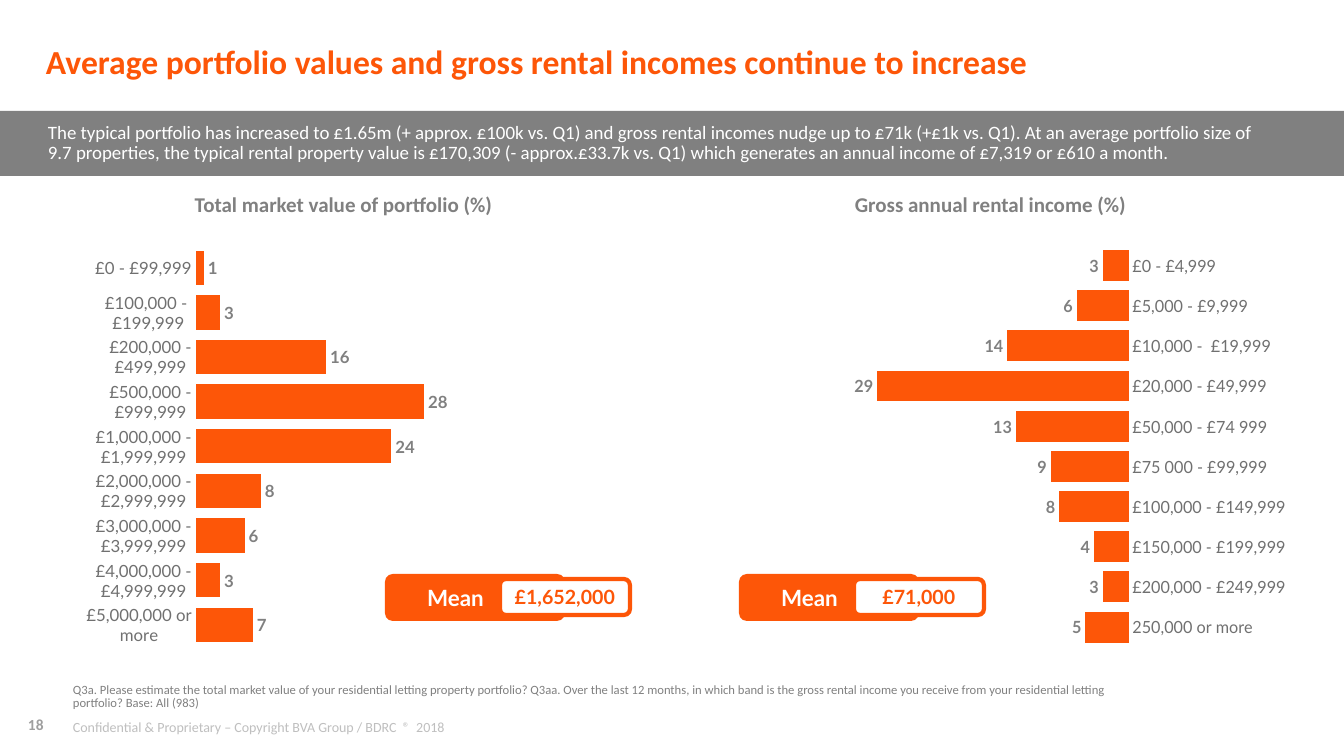
"""Build the slide on portfolio values and gross rental incomes."""
from dataclasses import dataclass

from pptx import Presentation
from pptx.chart.data import CategoryChartData
from pptx.dml.color import RGBColor
from pptx.enum.chart import XL_CHART_TYPE, XL_LABEL_POSITION, XL_TICK_MARK
from pptx.enum.shapes import MSO_SHAPE
from pptx.enum.text import MSO_ANCHOR, PP_ALIGN
from pptx.oxml import parse_xml
from pptx.oxml.ns import nsdecls
from pptx.util import Emu, Inches, Pt


@dataclass(frozen=True)
class Theme:
    """Colours, fonts and type sizes of the slide."""
    orange: str = "FD5608"
    grey: str = "808080"
    axis: str = "707070"
    number: str = "9F9F9F"
    pale: str = "BFBFBF"
    white: str = "FFFFFF"
    body: str = "Calibri"
    data: str = "Lato"
    title: float = 24
    mean: float = 16
    heading: float = 15
    value: float = 14
    summary: float = 13.5
    chart: float = 12
    page: float = 11
    footer: float = 10
    note: float = 9


THEME = Theme()
PX_PER_INCH = 100.8
CHART_TOP, CHART_WIDTH, CHART_HEIGHT = 237, 591, 423

PORTFOLIO = {
    "£0 - £99,999": 1, "£100,000 -  £199,999": 3, "£200,000 - £499,999": 16,
    "£500,000 - £999,999": 28, "£1,000,000 - £1,999,999": 24,
    "£2,000,000 - £2,999,999": 8, "£3,000,000 - £3,999,999": 6,
    "£4,000,000 - £4,999,999": 3, "£5,000,000 or more": 7,
}
INCOME = {
    "£0 - £4,999": 3, "£5,000 - £9,999": 6, "£10,000 -  £19,999": 14,
    "£20,000 - £49,999": 29, "£50,000 - £74 999": 13, "£75 000 - £99,999": 9,
    "£100,000 - £149,999": 8, "£150,000 - £199,999": 4,
    "£200,000 - £249,999": 3, "250,000 or more": 5,
}


def px(*lengths):
    """Turn pixel lengths into EMU."""
    return [Emu(round(n * Inches(1) / PX_PER_INCH)) for n in lengths]


def assign(obj, values):
    """Set each named attribute of an object."""
    for name, value in values.items():
        setattr(obj, name, value)


def style_font(font, size, color, bold=False, name=THEME.body):
    """Give a font its face, size, weight and colour."""
    assign(font, {"name": name, "size": Pt(size), "bold": bold})
    font.color.rgb = RGBColor.from_string(color)


def write(sp, text, font, align=PP_ALIGN.LEFT, indent=0, spacing=0.9):
    """Write one vertically centred paragraph into a shape."""
    tf = sp.text_frame
    assign(tf, {"word_wrap": True, "vertical_anchor": MSO_ANCHOR.MIDDLE,
                "margin_left": px(indent)[0], "margin_right": 0,
                "margin_top": 0, "margin_bottom": 0})
    p = tf.paragraphs[0]
    assign(p, {"alignment": align, "line_spacing": spacing})
    r = p.add_run()
    r.text = text
    style_font(r.font, **font)


def add_text(s, box, text, align=PP_ALIGN.LEFT, **font):
    """Add a text box."""
    write(s.shapes.add_textbox(*px(*box)), text, font, align)


def add_block(shapes, kind, box, fill, outline=None):
    """Add a filled shape, outlined only when a colour is given."""
    sp = shapes.add_shape(kind, *px(*box))
    sp.shadow.inherit = False
    sp.fill.solid()
    sp.fill.fore_color.rgb = RGBColor.from_string(fill)
    if outline:
        sp.line.color.rgb = RGBColor.from_string(outline)
        sp.line.width = Pt(3)
    else:
        sp.line.fill.background()
    return sp


def add_mean(s, left, value):
    """Add the grouped badge that states a mean."""
    shapes = s.shapes.add_group_shape().shapes
    kind = MSO_SHAPE.ROUNDED_RECTANGLE
    label = add_block(shapes, kind, (left, 574, 180, 47), THEME.orange)
    write(label, "Mean", {"size": THEME.mean, "color": THEME.white,
                          "bold": True, "name": THEME.data}, indent=40, spacing=1)
    box = add_block(shapes, kind, (left + 115, 579, 130, 36), THEME.white, THEME.orange)
    write(box, value, {"size": THEME.value, "color": THEME.orange,
                       "bold": True, "name": THEME.data}, PP_ALIGN.CENTER, spacing=1)


def set_plot_area(chart, x, w):
    """Fix the inner plot area as fractions of the chart."""
    plot_area = chart._chartSpace.chart.plotArea
    for old in plot_area.findall("{*}layout"):
        plot_area.remove(old)
    sizes = "".join(f'<c:{tag} val="{val}"/>' for tag, val in
                    {"x": x, "y": 0.02, "w": w, "h": 0.95}.items())
    plot_area.insert(0, parse_xml(
        f'<c:layout {nsdecls("c")}><c:manualLayout><c:layoutTarget val="inner"/>'
        f'<c:xMode val="edge"/><c:yMode val="edge"/>{sizes}'
        '</c:manualLayout></c:layout>'))


def add_bars(s, left, bands, plot_x, plot_w, mirrored=False):
    """Add a bar chart of percentages by value band."""
    data = CategoryChartData(number_format="0")
    data.categories = list(bands)
    data.add_series("Series 1", list(bands.values()))
    box = px(left, CHART_TOP, CHART_WIDTH, CHART_HEIGHT)
    chart = s.shapes.add_chart(XL_CHART_TYPE.BAR_CLUSTERED, *box, data).chart
    assign(chart, {"has_legend": False, "has_title": False})
    style_font(chart.font, THEME.chart, THEME.axis, name=THEME.data)

    cat = chart.category_axis
    assign(cat, {"reverse_order": True, "has_major_gridlines": False,
                 "major_tick_mark": XL_TICK_MARK.NONE})
    cat.format.line.fill.background()
    style_font(cat.tick_labels.font, THEME.chart, THEME.axis, name=THEME.data)
    assign(chart.value_axis, {"minimum_scale": 0, "maximum_scale": 50,
                              "has_major_gridlines": False, "visible": False,
                              "reverse_order": mirrored})

    plot = chart.plots[0]
    assign(plot, {"gap_width": 30, "overlap": 94, "vary_by_categories": False,
                  "has_data_labels": True})
    assign(plot.data_labels, {"show_value": True, "number_format": "0",
                              "number_format_is_linked": False,
                              "position": XL_LABEL_POSITION.OUTSIDE_END})
    style_font(plot.data_labels.font, THEME.chart, THEME.grey, True, THEME.data)
    fill = plot.series[0].format.fill
    fill.solid()
    fill.fore_color.rgb = RGBColor.from_string(THEME.orange)
    set_plot_area(chart, plot_x, plot_w)


def main():
    """Build and save the slide."""
    prs = Presentation()
    prs.slide_width, prs.slide_height = px(1344, 756)
    s = prs.slides.add_slide(prs.slide_layouts[6])

    add_block(s.shapes, MSO_SHAPE.RECTANGLE, (0, 111, 1344, 65), THEME.grey)
    add_text(s, (46, 27, 1240, 74),
             "Average portfolio values and gross rental incomes continue to increase",
             size=THEME.title, color=THEME.orange, bold=True)
    add_text(s, (48, 111, 1222, 65),
             "The typical portfolio has increased to £1.65m (+ approx. £100k vs. Q1) and "
             "gross rental incomes nudge up to £71k (+£1k vs. Q1). At an average portfolio "
             "size of 9.7 properties, the typical rental property value is £170,309 "
             "(- approx.£33.7k vs. Q1) which generates an annual income of £7,319 or "
             "£610 a month.", size=THEME.summary, color=THEME.white)

    for left, heading in ((48, "Total market value of portfolio (%)"),
                          (695, "Gross annual rental income (%)")):
        add_text(s, (left, 184, CHART_WIDTH, 43), heading, PP_ALIGN.CENTER,
                 size=THEME.heading, color=THEME.grey, bold=True)
    add_bars(s, 48, PORTFOLIO, 0.25, 0.69)
    add_bars(s, 695, INCOME, 0, 0.76, mirrored=True)
    add_mean(s, 385, "£1,652,000")
    add_mean(s, 739, "£71,000")

    add_text(s, (73, 682, 1038, 30),
             "Q3a. Please estimate the total market value of your residential letting "
             "property portfolio? Q3aa. Over the last 12 months, in which band is the gross "
             "rental income you receive from your residential letting portfolio? "
             "Base: All (983)", size=THEME.note, color=THEME.grey)
    add_text(s, (28, 707, 30, 36), "18",
             size=THEME.page, color=THEME.number, bold=True)
    add_text(s, (73, 716, 1122, 24),
             "Confidential & Proprietary – Copyright BVA Group / BDRC  ®  2018",
             size=THEME.footer, color=THEME.pale)
    prs.save("out.pptx")


if __name__ == "__main__":
    main()
